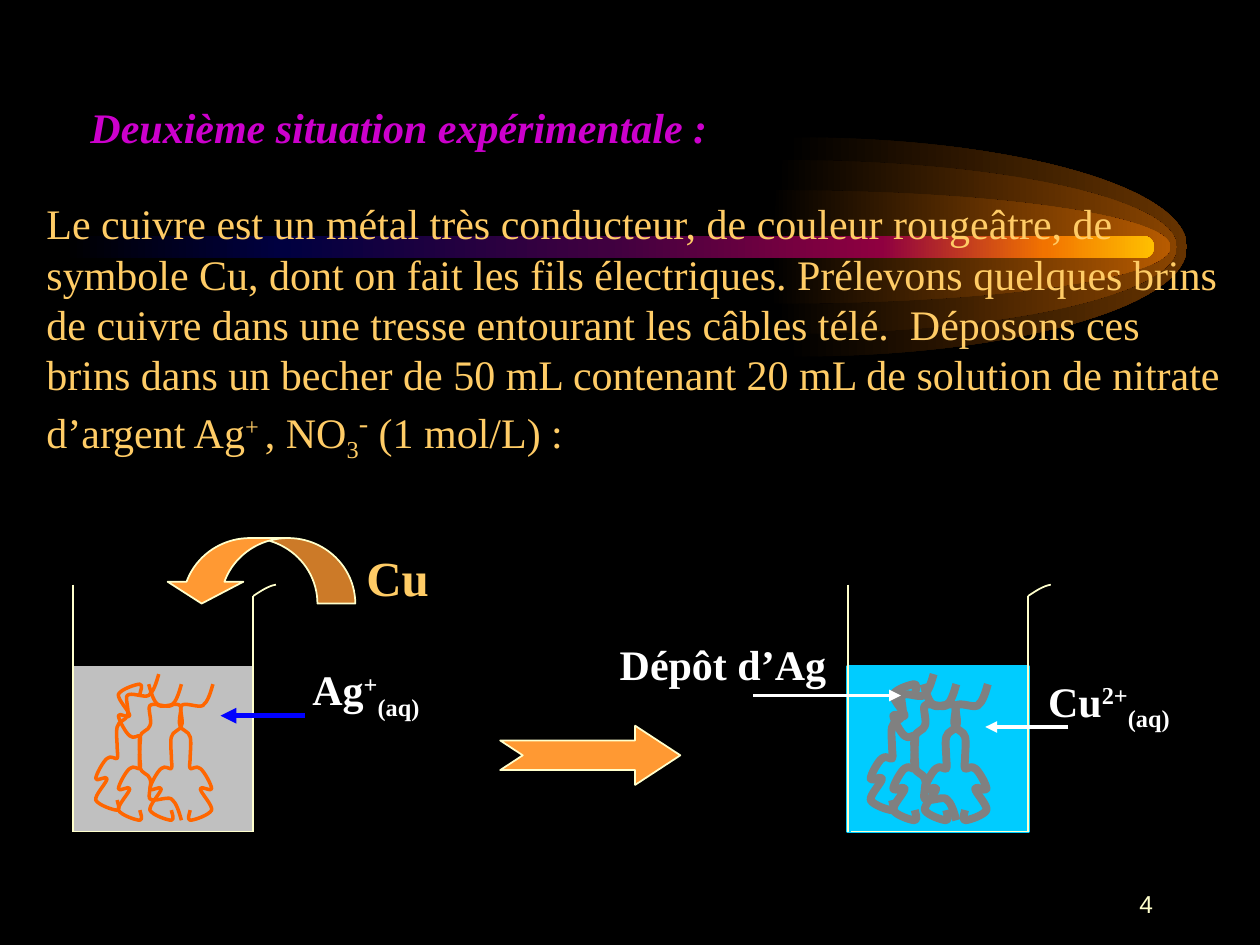
from itertools import chain

from lxml import etree
from pptx import Presentation
from pptx.dml.color import RGBColor
from pptx.enum import shapes, text
from pptx.oxml.ns import qn
from pptx.util import Inches, Pt

SERIF = "Times New Roman"
CREAM, GOLD, ORANGE, WHITE = "FFFFCC", "FFCC66", "FF9933", "FFFFFF"
BEAKER_GAP = 6.15
STRAND_WIDTH, STRAND_HEIGHT = 0.51, 1.08
STRAND_CURVES = [
    ((0.49, 0.07), (0.47, 0.14), (0.43, 0.17)),
    ((0.39, 0.19), (0.29, 0.14), (0.26, 0.17)),
    ((0.24, 0.19), (0.28, 0.29), (0.26, 0.33)),
    ((0.25, 0.37), (0.19, 0.37), (0.18, 0.42)),
    ((0.17, 0.46), (0.18, 0.54), (0.18, 0.58)),
    ((0.18, 0.62), (0.19, 0.65), (0.18, 0.67)),
    ((0.17, 0.68), (0.13, 0.64), (0.10, 0.67)),
    ((0.07, 0.69), (0.01, 0.80), (0.01, 0.83)),
    ((0.01, 0.86), (0.10, 0.80), (0.10, 0.83)),
    ((0.10, 0.86), (0.00, 0.96), (0.01, 1.00)),
    ((0.03, 1.04), (0.15, 1.08), (0.18, 1.08)),
    ((0.21, 1.08), (0.18, 1.01), (0.18, 1.00)),
]
STRANDS = [(0.75, 5.35, False, False), (0.93, 5.43, False, False),
           (0.93, 5.43, False, True), (1.18, 5.43, True, False),
           (1.18, 5.43, False, False)]


def color(value):
    """Return the colour for a hex string."""
    return RGBColor.from_string(value)


def style(shape, fill=None, line=None, width=1):
    """Set a solid fill and an outline, and remove the shadow."""
    shape.shadow.inherit = False
    if fill:
        shape.fill.solid()
        shape.fill.fore_color.rgb = color(fill)
    else:
        shape.fill.background()
    if line:
        shape.line.color.rgb = color(line)
        shape.line.width = Pt(width)
    else:
        shape.line.fill.background()


def set_gradient(shape, stops):
    """Fill a shape from left to right with (percent, colour) stops."""
    shape.fill.gradient()
    shape.fill.gradient_angle = 0
    stop_list = shape._element.spPr.find(qn("a:gradFill")).find(qn("a:gsLst"))
    for old in list(stop_list):
        stop_list.remove(old)
    for percent, value in stops:
        stop = etree.SubElement(stop_list, qn("a:gs"), pos=str(percent * 1000))
        etree.SubElement(stop, qn("a:srgbClr"), val=value)


def add_preset(slide, kind, box, fill=None, line=None, width=1, adjustments=()):
    """Add a preset shape in a box given in inches."""
    shape = slide.shapes.add_shape(kind, *map(Inches, box))
    for index, value in enumerate(adjustments):
        shape.adjustments[index] = value
    style(shape, fill, line, width)
    return shape


def add_curve(slide, points, line=None, width=1, close=False):
    """Add a chain of cubic curves: a start, then three points for each curve."""
    corners = [(Inches(x), Inches(y)) for x, y in points]
    builder = slide.shapes.build_freeform(*corners[0])
    builder.add_line_segments(corners[1:], close=close)
    shape = builder.convert_to_shape()
    segments = list(shape._element.spPr.iter(qn("a:lnTo")))
    for index in range(0, len(segments), 3):
        curve = etree.Element(qn("a:cubicBezTo"))
        segments[index].addprevious(curve)
        for segment in segments[index:index + 3]:
            curve.append(segment[0])
            segment.getparent().remove(segment)
    style(shape, None, line, width)
    return shape


def add_line(slide, start, end, value, width=1, arrow=False):
    """Add a straight connector, with an arrowhead at its end if wanted."""
    line = slide.shapes.add_connector(
        shapes.MSO_CONNECTOR.STRAIGHT, *map(Inches, start + end))
    line.line.color.rgb = color(value)
    line.line.width = Pt(width)
    if arrow:
        etree.SubElement(line.line._get_or_add_ln(), qn("a:tailEnd"), type="triangle")
    etree.SubElement(line._element.spPr, qn("a:effectLst"))


def add_text(slide, box, runs, value, size=24, font=SERIF, bold=False,
             italic=False, wrap=False):
    """Add a text box of (text, baseline percent[, size]) runs."""
    shape = slide.shapes.add_textbox(*map(Inches, box))
    frame = shape.text_frame
    frame.word_wrap = wrap
    frame.auto_size = text.MSO_AUTO_SIZE.SHAPE_TO_FIT_TEXT
    for words, baseline, *own_size in runs:
        run = frame.paragraphs[0].add_run()
        run.text = words
        run.font.name = font
        run.font.size = Pt(own_size[0] if own_size else size)
        run.font.bold, run.font.italic = bold, italic
        run.font.color.rgb = color(value)
        if baseline:
            run.font._element.set("baseline", str(baseline * 1000))
    return frame


def add_glow(slide, center_x, radius_y, value):
    """Add the right half of an ellipse that fades in from black."""
    middle, radius_x, bend = 1.96, 3.13, 0.55
    top, bottom, right = middle - radius_y, middle + radius_y, center_x + radius_x
    control_x = center_x + bend * radius_x
    points = [(center_x, top),
              (control_x, top), (right, middle - bend * radius_y), (right, middle),
              (right, middle + bend * radius_y), (control_x, bottom), (center_x, bottom),
              (center_x - 0.02, bottom), (center_x - 0.03, bottom), (center_x - 0.05, bottom)]
    set_gradient(add_curve(slide, points, close=True), [(0, "000000"), (100, value)])


def add_backdrop(slide):
    """Add the black background, the comet glow and its coloured bar."""
    slide.background.fill.solid()
    slide.background.fill.fore_color.rgb = color("000000")
    for center_x, radius_y, value in ((6.29, 0.87, "663300"), (6.21, 0.69, "894400"),
                                      (6.16, 0.45, "B75B00")):
        add_glow(slide, center_x, radius_y, value)
    bar = add_preset(slide, shapes.MSO_SHAPE.ROUNDED_RECTANGLE,
                     (0.5, 1.87, 8.66, 0.18), adjustments=(0.5,))
    set_gradient(bar, [(0, "000000"), (20, "000040"), (50, "400040"),
                       (75, "8F0040"), (90, "F27300"), (100, "FFBF00")])


def add_beaker(slide, offset, base, liquid, border, metal, thickness):
    """Add a beaker with its liquid and the metal strands in it."""
    left, right, bottom = 0.58 + offset, 2.01 + offset, 6.6
    add_preset(slide, shapes.MSO_SHAPE.RECTANGLE, (left, 5.29, 1.43, 1.31),
               liquid, liquid, border)
    for start, end in (((left, 4.64), (left, bottom)), ((right, 4.73), (right, bottom)),
                       ((base, bottom), (base + 1.42, bottom))):
        add_line(slide, start, end, CREAM)
    add_curve(slide, [(right, 4.73), (right + 0.06, 4.69), (right + 0.12, 4.65),
                      (right + 0.18, 4.64)], CREAM)
    strand = [(STRAND_WIDTH, 0), *chain.from_iterable(STRAND_CURVES)]
    for x, y, mirrored, inverted in STRANDS:
        points = [(offset + x + (STRAND_WIDTH - dx if mirrored else dx),
                   y + (STRAND_HEIGHT - dy if inverted else dy)) for dx, dy in strand]
        add_curve(slide, points, metal, thickness)


def main():
    """Build the slide and save it."""
    presentation = Presentation()
    presentation.slide_width, presentation.slide_height = Inches(10), Inches(7.5)
    slide = presentation.slides.add_slide(presentation.slide_layouts[6])
    add_backdrop(slide)

    number = add_text(slide, (7.17, 6.92, 2.08, 0.5), [("4", 0)], CREAM, 14, "Arial", wrap=True)
    number.auto_size = text.MSO_AUTO_SIZE.NONE
    number.vertical_anchor = text.MSO_ANCHOR.MIDDLE
    number.paragraphs[0].alignment = text.PP_ALIGN.RIGHT
    add_text(slide, (0.27, 1.52, 9.58, 2.1), [
        ("Le cuivre est un métal très conducteur, de couleur rougeâtre, de  symbole Cu, "
         "dont on fait les fils électriques. Prélevons quelques brins de cuivre dans une "
         "tresse entourant les câbles télé.  Déposons ces brins dans un becher de 50 mL "
         "contenant 20 mL de solution de nitrate d’argent Ag", 0),
        ("+ ", 30), (", NO", 0), ("3", -25), ("-", 30, 28), (" (1 mol/L) :", 0)],
        GOLD, wrap=True)
    add_text(slide, (0.62, 0.76, 5.14, 0.51), [("Deuxième situation expérimentale :", 0)],
             "CC00CC", bold=True, italic=True)

    add_beaker(slide, 0, 0.58, "C0C0C0", 1, "FF6600", 2)
    add_beaker(slide, BEAKER_GAP, 6.75, "00CCFF", 2, "808080", 4.5)
    dip_arrow = add_preset(slide, shapes.MSO_SHAPE.CURVED_DOWN_ARROW, (1.3, 4.27, 1.52, 0.52),
                           ORANGE, CREAM, adjustments=(0.578, 1.156, 0.333))
    dip_arrow._element.spPr.find(qn("a:xfrm")).set("flipH", "1")
    add_preset(slide, shapes.MSO_SHAPE.NOTCHED_RIGHT_ARROW, (3.97, 5.76, 1.43, 0.47),
               ORANGE, CREAM, adjustments=(0.5, 0.763))

    add_text(slide, (2.81, 4.3, 0.7, 0.57), [("Cu", 0)], GOLD, 28, bold=True)
    for box, runs in (
            ((2.38, 5.22, 1.12, 0.5), [("Ag", 0), ("+", 30), ("(aq)", -25)]),
            ((4.82, 5.02, 1.84, 0.5), [("Dépôt d’Ag", 0)]),
            ((8.22, 5.31, 1.33, 0.5), [("Cu", 0), ("2+", 30), ("(aq)", -25)])):
        add_text(slide, box, runs, WHITE, bold=True)
    add_line(slide, (2.42, 5.68), (1.75, 5.68), "0000FF", 3, arrow=True)
    add_line(slide, (5.98, 5.52), (7.15, 5.52), WHITE, 2.25, arrow=True)
    add_line(slide, (8.48, 5.77), (7.82, 5.77), WHITE, 2.25, arrow=True)

    presentation.save("out.pptx")


if __name__ == "__main__":
    main()
